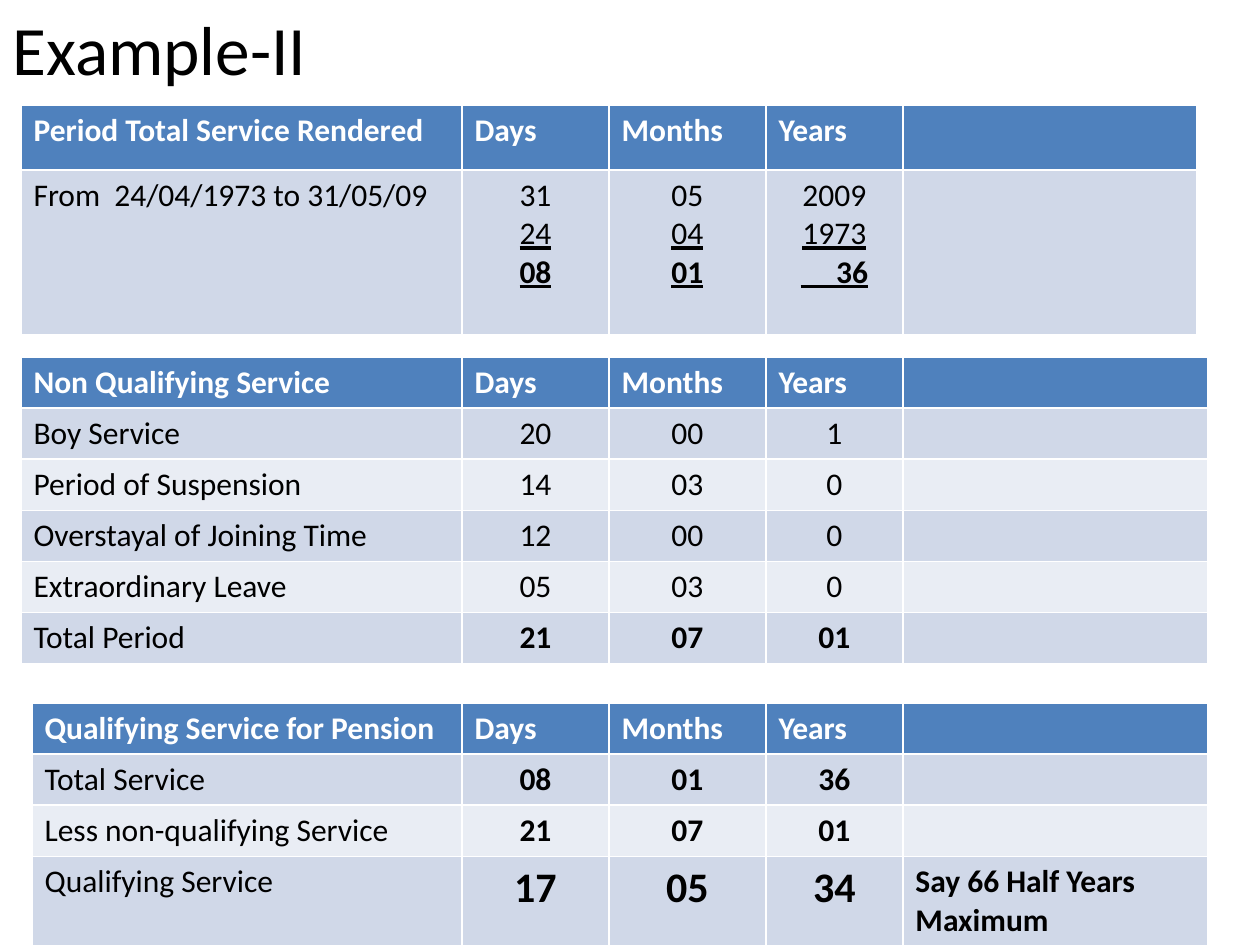
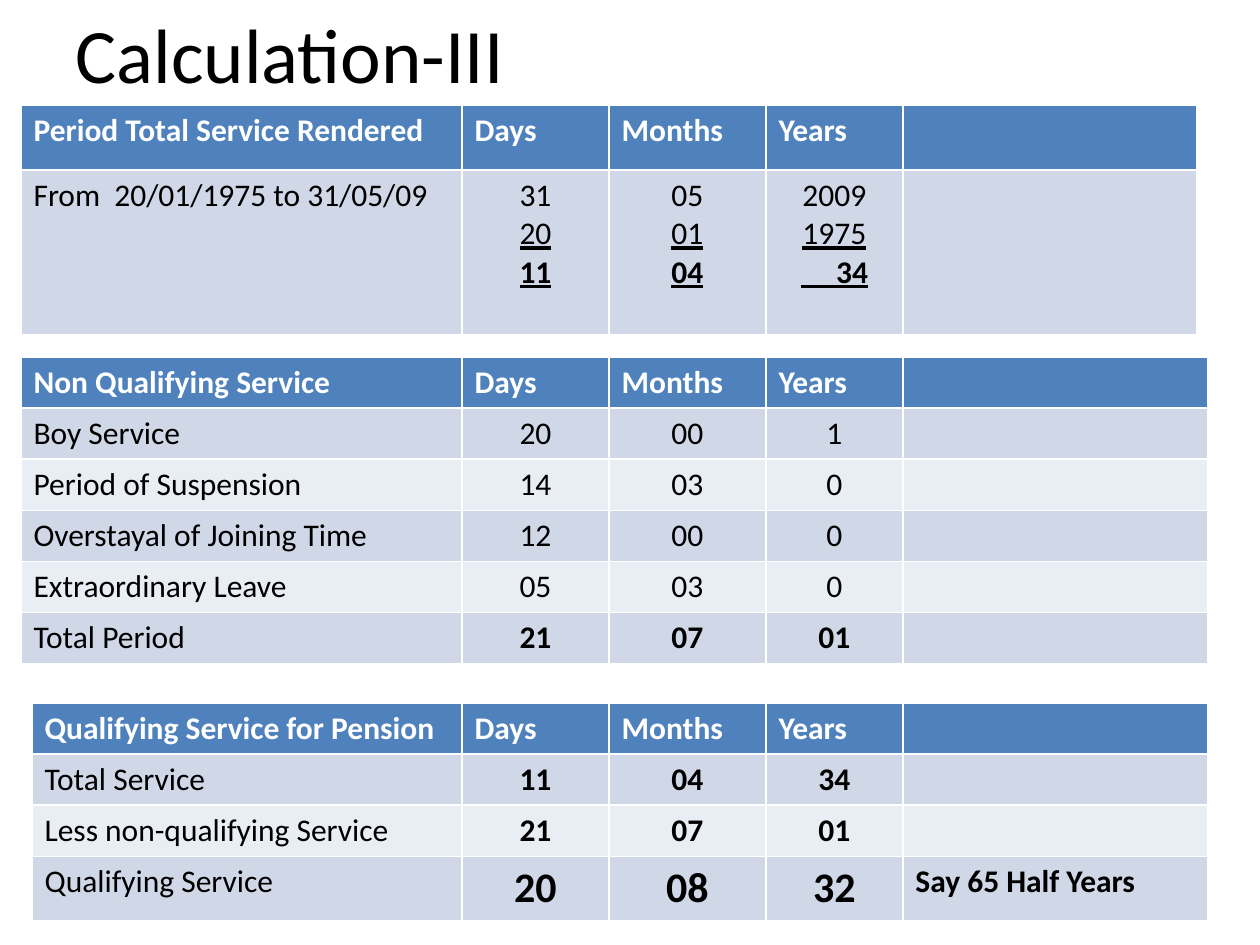
from pptx import Presentation
from pptx.dml.color import RGBColor
from pptx.enum.text import MSO_ANCHOR as Anchor, PP_ALIGN as Align
from pptx.util import Pt

EMU_PER_PX = 914400 / 126
FONT = "Calibri"
COLORS = {
    "header": "4F81BD",
    "odd_row": "D0D8E8",
    "even_row": "E9EDF4",
    "header_text": "FFFFFF",
    "text": "000000",
}

# Shared grid: number columns line up across all tables
DAYS_LEFT = 462
NUMBER_WIDTHS = [147, 157, 137]
ROW_HEIGHT = 51

NON_QUALIFYING = [
    ("Boy Service", "20", "00", "1"),
    ("Period of Suspension", "14", "03", "0"),
    ("Overstayal of Joining Time", "12", "00", "0"),
    ("Extraordinary Leave", "05", "03", "0"),
    ("Total Period", "21", "07", "01"),
]
NON_QUALIFYING_TOTAL = NON_QUALIFYING[-1][1:]

EXAMPLES = [
    {
        "title": "Example-II", "title_box": (0, 0, 1197, 95), "title_size": 39.6,
        "period": "From  24/04/1973 to 31/05/09",
        "end": ("31", "05", "2009"), "start": ("24", "04", "1973"),
        "service": ("08", "01", "36"), "qualifying": ("17", "05", "34"),
        "note": "Say 66 Half Years Maximum", "result_height": 89,
    },
    {
        "title": "Calculation-III", "title_box": (63, 0, 1134, 105), "title_size": 44,
        "period": "From  20/01/1975 to 31/05/09",
        "end": ("31", "05", "2009"), "start": ("20", "01", "1975"),
        "service": ("11", "04", "34"), "qualifying": ("20", "08", "32"),
        "note": "Say 65 Half Years", "result_height": 64,
    },
]


def px(length):
    return round(length * EMU_PER_PX)


def style_font(font, size, color="text", bold=False, underline=False):
    font.name = FONT
    font.size = Pt(size)
    font.bold = bold
    font.underline = underline
    font.color.rgb = RGBColor.from_string(COLORS[color])


def add_title(slide, text, box, size):
    title = slide.shapes.title
    title.left, title.top, title.width, title.height = map(px, box)
    title.text_frame.text = text
    title.text_frame.vertical_anchor = Anchor.MIDDLE
    paragraph = title.text_frame.paragraphs[0]
    paragraph.alignment = Align.LEFT
    style_font(paragraph.font, size)


def write_cell(cell, text, size=18, color="text", bold=False, align=Align.LEFT):
    cell.text = text
    for paragraph in cell.text_frame.paragraphs:
        paragraph.alignment = align
        style_font(paragraph.font, size, color, bold)


def add_service_table(slide, left, top, last_width, heading, rows, heights):
    """Add a table with a header row and return its table object."""
    widths = [DAYS_LEFT - left, *NUMBER_WIDTHS, last_width]
    frame = slide.shapes.add_table(len(heights), len(widths), px(left), px(top),
                                   px(sum(widths)), px(sum(heights)))
    table = frame.table
    for column, width in zip(table.columns, widths):
        column.width = px(width)
    for row, height in zip(table.rows, heights):
        row.height = px(height)

    # Fills: header, then alternating bands
    for index, row in enumerate(table.rows):
        band = "header" if index == 0 else "odd_row" if index % 2 else "even_row"
        for cell in row.cells:
            cell.fill.solid()
            cell.fill.fore_color.rgb = RGBColor.from_string(COLORS[band])

    for column, text in enumerate([heading, "Days", "Months", "Years"]):
        write_cell(table.cell(0, column), text, color="header_text", bold=True)
    for index, (label, *numbers) in enumerate(rows, start=1):
        write_cell(table.cell(index, 0), label)
        write_numbers(table, index, numbers)
    return table


def write_numbers(table, row, numbers, **style):
    for column, number in enumerate(numbers, start=1):
        write_cell(table.cell(row, column), number, align=Align.CENTER, **style)


def add_rendered_table(slide, example):
    """Subtraction of dates, with the lower two lines underlined."""
    days, months, years = example["service"]
    # The rule under the year difference starts below the full year
    results = (days, months, years.rjust(7))
    sums = ["\n".join(lines)
            for lines in zip(example["end"], example["start"], results)]
    table = add_service_table(slide, 21, 105, 294, "Period Total Service Rendered",
                              [(example["period"], *sums)], [65, 165])
    for column in range(1, 4):
        _, subtrahend, result = table.cell(1, column).text_frame.paragraphs
        subtrahend.font.underline = result.font.underline = True
        result.font.bold = True


def add_non_qualifying_table(slide):
    table = add_service_table(slide, 21, 357, 305, "Non Qualifying Service",
                              NON_QUALIFYING, [ROW_HEIGHT] * 6)
    write_numbers(table, 5, NON_QUALIFYING_TOTAL, bold=True)


def add_qualifying_table(slide, example):
    rows = [
        ("Total Service", *example["service"]),
        ("Less non-qualifying Service", *NON_QUALIFYING_TOTAL),
        ("Qualifying Service", *example["qualifying"]),
    ]
    table = add_service_table(slide, 32, 703, 305, "Qualifying Service for Pension",
                              rows, [ROW_HEIGHT] * 3 + [example["result_height"]])
    for index, (_, *numbers) in enumerate(rows, start=1):
        size = 24 if index == len(rows) else 18
        write_numbers(table, index, numbers, size=size, bold=True)
    write_cell(table.cell(3, 4), example["note"], bold=True)


def main():
    presentation = Presentation()
    presentation.slide_width = px(1260)
    presentation.slide_height = px(945)
    title_only = presentation.slide_layouts[5]
    for example in EXAMPLES:
        slide = presentation.slides.add_slide(title_only)
        add_title(slide, example["title"], example["title_box"], example["title_size"])
        add_rendered_table(slide, example)
        add_non_qualifying_table(slide)
        add_qualifying_table(slide, example)
    presentation.save("out.pptx")


if __name__ == "__main__":
    main()
